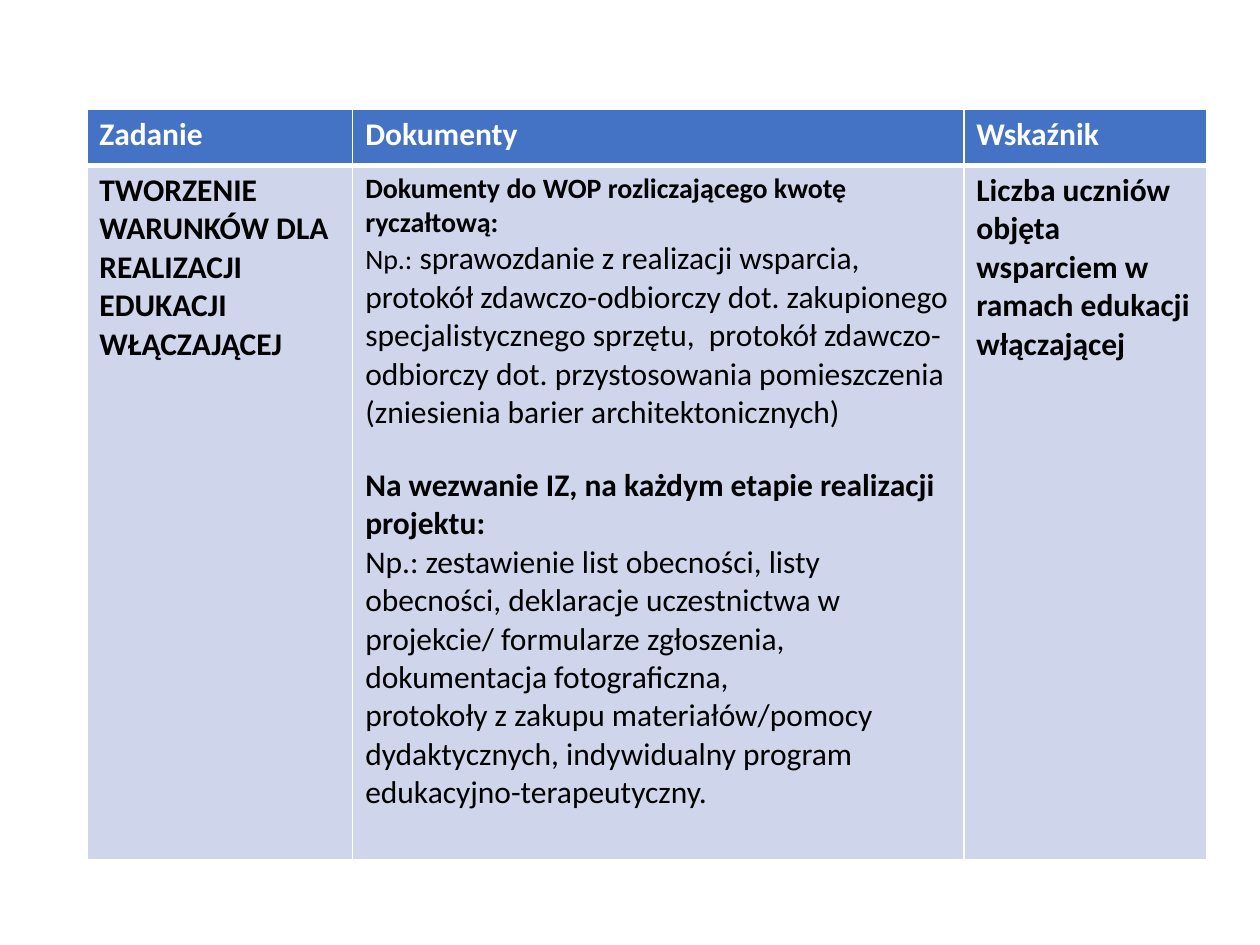
"""Build a slide with a table of a task, its documents and its indicator."""
from lxml import etree
from pptx import Presentation
from pptx.dml.color import RGBColor
from pptx.oxml.ns import qn
from pptx.util import Cm, Pt

WHITE = RGBColor(0xFF, 0xFF, 0xFF)
BLACK = RGBColor(0x00, 0x00, 0x00)
HEADER_BLUE = RGBColor(0x44, 0x72, 0xC4)
BODY_BLUE = RGBColor(0xCF, 0xD5, 0xEA)
FONT = "Calibri"

COLUMN_WIDTHS = [Cm(5.36), Cm(12.32), Cm(4.9)]
ROW_HEIGHTS = [Cm(1.12), Cm(14)]
SECTION_GAP = Pt(19.5)

# Each paragraph is (space before, runs); each run is (text, size, bold).
HEADINGS = [[(0, [(heading, 18, True)])] for heading in ("Zadanie", "Dokumenty", "Wskaźnik")]
TASK = [(0, [("TWORZENIE WARUNKÓW DLA REALIZACJI EDUKACJI WŁĄCZAJĄCEJ", 18, True)])]
DOCUMENTS = [
    (0, [("Dokumenty do WOP rozliczającego kwotę ryczałtową:", 16, True)]),
    (0, [
        ("Np.:", 16, False),
        (" sprawozdanie z realizacji wsparcia, protokół zdawczo-odbiorczy dot. "
         "zakupionego specjalistycznego sprzętu,  protokół zdawczo-odbiorczy dot. "
         "przystosowania pomieszczenia (zniesienia barier architektonicznych)", 18, False),
    ]),
    (SECTION_GAP, [("Na wezwanie IZ, na każdym etapie realizacji projektu:", 18, True)]),
    (0, [("Np.: zestawienie list obecności, listy obecności, deklaracje uczestnictwa w "
          "projekcie/ formularze zgłoszenia, dokumentacja fotograficzna,", 18, False)]),
    (0, [("protokoły z zakupu materiałów/pomocy dydaktycznych, indywidualny program "
          "edukacyjno-terapeutyczny.", 18, False)]),
]
INDICATOR = [(0, [("Liczba uczniów objęta wsparciem w ramach edukacji włączającej", 18, True)])]


def set_borders(cell, top, bottom):
    """Draw white cell borders with the given top and bottom widths in points."""
    properties = cell._tc.get_or_add_tcPr()
    for side, width in (("L", 1), ("R", 1), ("T", top), ("B", bottom)):
        line = etree.SubElement(properties, qn(f"a:ln{side}"), w=str(Pt(width)))
        fill = etree.SubElement(line, qn("a:solidFill"))
        etree.SubElement(fill, qn("a:srgbClr"), val=str(WHITE))


def write_paragraphs(frame, paragraphs, color):
    """Fill a text frame with paragraphs, run by run."""
    for index, (space_before, runs) in enumerate(paragraphs):
        paragraph = frame.add_paragraph() if index else frame.paragraphs[0]
        if space_before:
            paragraph.space_before = space_before
        for text, size, bold in runs:
            run = paragraph.add_run()
            run.text = text
            run.font.name = FONT
            run.font.size = Pt(size)
            run.font.bold = bold
            run.font.color.rgb = color


def fill_row(row, contents, fill_color, text_color, top, bottom):
    """Style and fill every cell of a table row."""
    for cell, paragraphs in zip(row.cells, contents):
        set_borders(cell, top, bottom)
        cell.fill.solid()
        cell.fill.fore_color.rgb = fill_color
        write_paragraphs(cell.text_frame, paragraphs, text_color)


def add_task_table(slide):
    """Add the table with its header row and one task row."""
    table = slide.shapes.add_table(
        len(ROW_HEIGHTS), len(COLUMN_WIDTHS), Cm(1.75), Cm(2.21),
        sum(COLUMN_WIDTHS), sum(ROW_HEIGHTS)).table
    for column, width in zip(table.columns, COLUMN_WIDTHS):
        column.width = width
    for row, height in zip(table.rows, ROW_HEIGHTS):
        row.height = height
    fill_row(table.rows[0], HEADINGS, HEADER_BLUE, WHITE, top=1, bottom=3)
    fill_row(table.rows[1], [TASK, DOCUMENTS, INDICATOR], BODY_BLUE, BLACK, top=3, bottom=1)


def main():
    """Create and save the presentation."""
    presentation = Presentation()
    presentation.slide_width = Cm(25.4)
    presentation.slide_height = Cm(19.05)
    slide = presentation.slides.add_slide(presentation.slide_layouts.get_by_name("Blank"))
    add_task_table(slide)
    presentation.save("out.pptx")


if __name__ == "__main__":
    main()
